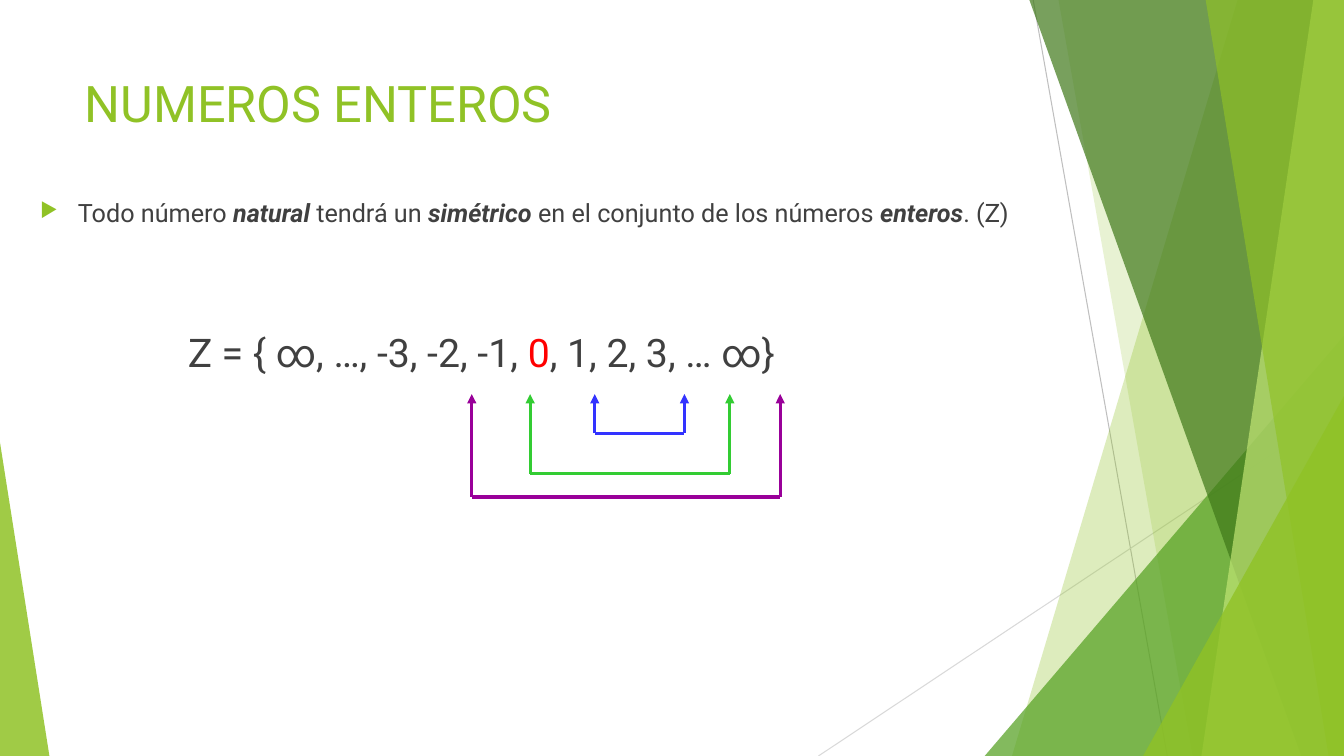
from dataclasses import dataclass

from lxml.etree import SubElement
from pptx import Presentation
from pptx.dml.color import RGBColor
from pptx.enum.shapes import MSO_CONNECTOR as Conn, MSO_SHAPE as Kind
from pptx.oxml.ns import qn
from pptx.util import Pt

LIME = RGBColor(0x90, 0xC2, 0x26)
LEAF = RGBColor(0x54, 0xA0, 0x21)
MOSS = RGBColor(0x3F, 0x78, 0x19)
PALE = RGBColor(0xC0, 0xE4, 0x74)
GREY = RGBColor(0xBF, 0xBF, 0xBF)
MIST = RGBColor(0xD9, 0xD9, 0xD9)
DARK = RGBColor(0x40, 0x40, 0x40)
RED = RGBColor(0xFF, 0, 0)
BLUE = RGBColor(0x33, 0x33, 0xFF)
GREEN = RGBColor(0x33, 0xCC, 0x33)
PLUM = RGBColor(0x99, 0, 0x99)

WIDE, HIGH = 960, 540
TOP = -0.6  # panes start just above the slide
TIP = 281.5  # height of all arrow tips


@dataclass
class Pane:
    """Four-sided pane that fills the space up to the right edge."""
    head: float
    foot: float
    color: RGBColor
    alpha: int


@dataclass
class Wedge:
    """Triangle standing on the bottom edge; apex 0 is left, 1 right."""
    left: float
    wide: float
    high: float
    apex: float
    color: RGBColor
    alpha: int


@dataclass
class Brace:
    """Bracket that joins a number to its opposite."""
    left: float
    right: float
    base: float
    color: RGBColor


@dataclass
class Part:
    """Stretch of text in one format."""
    text: str
    color: RGBColor = DARK
    font: str = "Roboto"
    strong: bool = False


DECOR = [
    Pane(884.2, 722.9, LIME, 30),
    Pane(756, 851.8, LIME, 20),
    Wedge(703.4, 256.6, 300.2, 1, LEAF, 72),
    Pane(735.1, 929.5, MOSS, 70),
    Pane(938.2, 858.2, PALE, 70),
    Pane(861.1, 949, LIME, 65),
    Wedge(816.5, 143.5, 257, 1, LIME, 80),
    Wedge(0, 35.3, 223.9, 0, LIME, 85),
]
BRACES = [
    Brace(424.8, 488.9, 309.6, BLUE),
    Brace(378.7, 521.3, 338.4, GREEN),
    Brace(337, 557.3, 355, PLUM),
]


def paint(shape, color: RGBColor, alpha: int) -> None:
    shape.shadow.inherit = False
    shape.line.fill.background()
    shape.fill.solid()
    shape.fill.fore_color.rgb = color
    tint = shape.fill._xPr.find(".//" + qn("a:srgbClr"))
    SubElement(tint, qn("a:alpha"), val=str(alpha * 1000))


def draw_pane(slide, pane: Pane) -> None:
    form = slide.shapes.build_freeform(Pt(pane.head), Pt(TOP), scale=1.0)
    form.add_line_segments([(Pt(WIDE), Pt(TOP)), (Pt(WIDE), Pt(HIGH)),
                            (Pt(pane.foot), Pt(HIGH))], close=True)
    paint(form.convert_to_shape(), pane.color, pane.alpha)


def draw_wedge(slide, wedge: Wedge) -> None:
    shape = slide.shapes.add_shape(
        Kind.ISOSCELES_TRIANGLE, Pt(wedge.left), Pt(HIGH - wedge.high),
        Pt(wedge.wide), Pt(wedge.high))
    shape.adjustments[0] = wedge.apex
    paint(shape, wedge.color, wedge.alpha)


def draw_line(slide, x1: float, y1: float, x2: float, y2: float,
              color: RGBColor, width: float, arrow: bool = False) -> None:
    line = slide.shapes.add_connector(
        Conn.STRAIGHT, Pt(x1), Pt(y1), Pt(x2), Pt(y2))
    line.line.color.rgb = color
    line.line.width = Pt(width)
    if arrow:
        SubElement(line.line._get_or_add_ln(), qn("a:tailEnd"), type="triangle")
    SubElement(line._element.spPr, qn("a:effectLst"))


def draw_brace(slide, brace: Brace) -> None:
    for x in (brace.left, brace.right):
        draw_line(slide, x, brace.base, x, TIP, brace.color, 2.25, arrow=True)
    draw_line(slide, brace.left, brace.base, brace.right, brace.base,
              brace.color, 2.25)


def add_text(slide, parts: list[Part], *, left: float, top: float, wide: float,
             high: float, size: float, bullet: bool = False) -> None:
    box = slide.shapes.add_textbox(Pt(left), Pt(top), Pt(wide), Pt(high))
    box.text_frame.word_wrap = True
    para = box.text_frame.paragraphs[0]
    for part in parts:
        run = para.add_run()
        run.text = part.text
        font = run.font
        font.name, font.size = part.font, Pt(size)
        font.color.rgb = part.color
        font.bold = font.italic = part.strong
    if bullet:
        props = para._p.get_or_add_pPr()
        props.set("marL", str(Pt(27)))
        props.set("indent", str(-Pt(27)))
        tint = SubElement(props, qn("a:buClr"))
        SubElement(tint, qn("a:srgbClr"), val=str(LIME))
        SubElement(props, qn("a:buSzPct"), val="80000")
        SubElement(props, qn("a:buChar"), char="▶")


def main() -> None:
    deck = Presentation()
    deck.slide_width, deck.slide_height = Pt(WIDE), Pt(HIGH)
    slide = deck.slides.add_slide(deck.slide_layouts[6])

    # Background lines and panes
    draw_line(slide, 738, 0, 833.8, HIGH, GREY, 0.75)
    draw_line(slide, WIDE, 290.2, 584.6, HIGH, MIST, 0.75)
    for item in DECOR:
        if isinstance(item, Pane):
            draw_pane(slide, item)
        else:
            draw_wedge(slide, item)

    # Title, rule and number set
    add_text(slide, [Part("NUMEROS ENTEROS", LIME)],
             left=53.3, top=48.2, wide=676.8, high=103.7, size=36)
    add_text(slide, [
        Part("Todo número "), Part("natural", strong=True),
        Part(" tendrá un "), Part("simétrico", strong=True),
        Part(" en el conjunto de los números "), Part("enteros", strong=True),
        Part(". ("), Part("Z", font="Lato"), Part(")"),
    ], left=21.6, top=137.5, wide=792, high=40, size=18, bullet=True)
    add_text(slide, [
        Part("Z", font="Lato"), Part(" = { ∞, …, -3, -2, -1, "),
        Part("0", RED), Part(", 1, 2, 3, … ∞}"),
    ], left=127.5, top=231, wide=500, high=46, size=28)

    # Brackets between opposite numbers
    for brace in BRACES:
        draw_brace(slide, brace)

    deck.save("out.pptx")


if __name__ == "__main__":
    main()
